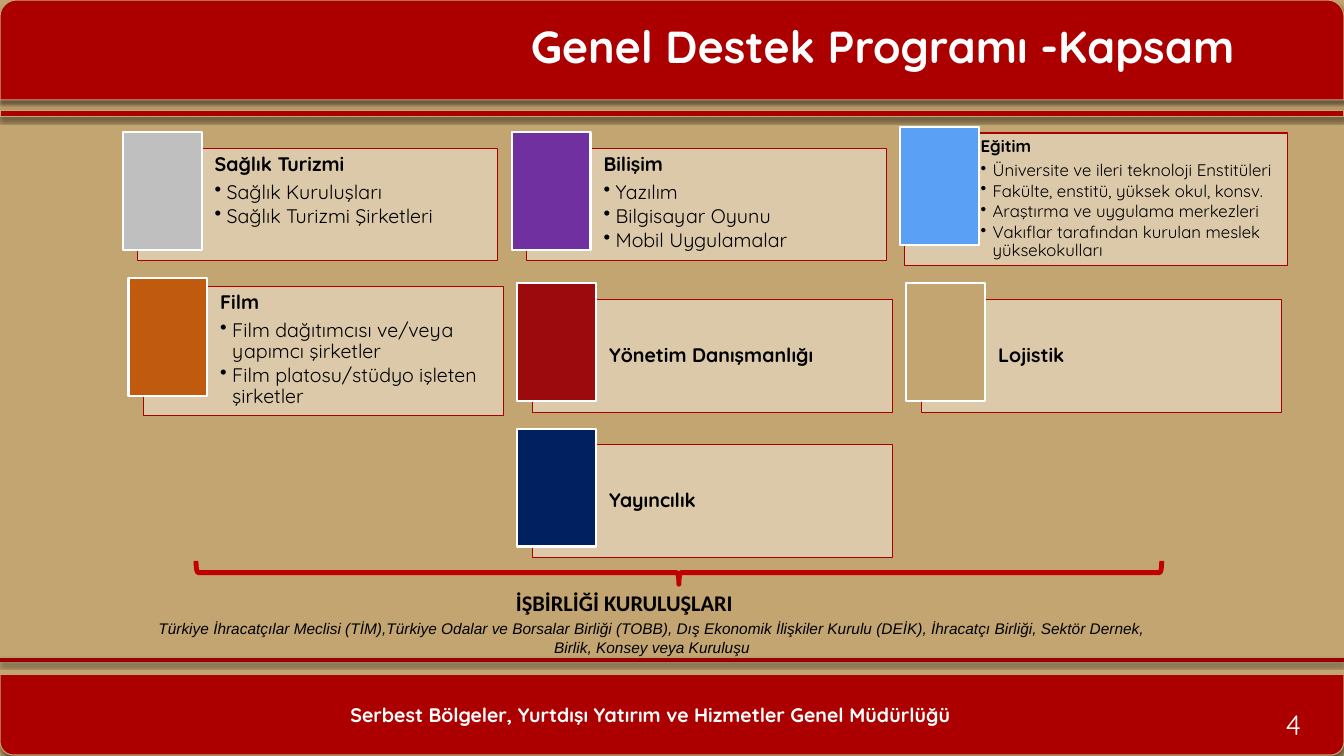
"""Build the support programme scope slide with its seven sector cards."""
from lxml import etree
from pptx import Presentation
from pptx.dml.color import RGBColor
from pptx.enum.shapes import MSO_CONNECTOR, MSO_SHAPE
from pptx.enum.text import MSO_ANCHOR, PP_ALIGN
from pptx.oxml.ns import qn
from pptx.util import Pt

RECT = MSO_SHAPE.RECTANGLE
ROUND_TOP = MSO_SHAPE.ROUND_2_SAME_RECTANGLE
BRACE = MSO_SHAPE.RIGHT_BRACE
STRAIGHT = MSO_CONNECTOR.STRAIGHT
TOP, MIDDLE = MSO_ANCHOR.TOP, MSO_ANCHOR.MIDDLE
LEFT, CENTER, RIGHT = PP_ALIGN.LEFT, PP_ALIGN.CENTER, PP_ALIGN.RIGHT

SAND = RGBColor(0xC3, 0xA5, 0x72)
RED = RGBColor(0xAC, 0x00, 0x00)
RULE_RED = RGBColor(0x99, 0x00, 0x03)
BRACE_RED = RGBColor(0xC0, 0x00, 0x00)
WHITE = RGBColor(0xFF, 0xFF, 0xFF)
BLACK = RGBColor(0x00, 0x00, 0x00)
GREY = RGBColor(0xBF, 0xBF, 0xBF)
PURPLE = RGBColor(0x70, 0x30, 0xA0)
BLUE = RGBColor(0x5A, 0xA0, 0xF5)
ORANGE = RGBColor(0xC0, 0x5A, 0x0E)
CRIMSON = RGBColor(0x9D, 0x0A, 0x0E)
NAVY = RGBColor(0x00, 0x20, 0x60)

FONT = "Quicksand"
SLIDE_W, SLIDE_H = 960, 540
CARD_W, CARD_H, CARD_STEP = 257, 80.6, 277.8
SWATCH_W, SWATCH_H = 56.2, 84.2
BULLET_INDENT = 8.6


def add_shadow(sp):
    """Give a shape or connector a soft shadow below it."""
    spPr = sp._element.spPr
    for old in spPr.findall(qn("a:effectLst")):
        spPr.remove(old)
    effects = etree.SubElement(spPr, qn("a:effectLst"))
    shadow = etree.SubElement(effects, qn("a:outerShdw"), blurRad=str(Pt(3)),
                              dist=str(Pt(2)), dir="5400000", rotWithShape="0")
    color = etree.SubElement(shadow, qn("a:srgbClr"), val="000000")
    etree.SubElement(color, qn("a:alpha"), val="45000")


def add_box(s, kind, box, fill, line, weight):
    """Add a filled and outlined preset shape without shadow."""
    sp = s.shapes.add_shape(kind, *map(Pt, box))
    sp.shadow.inherit = False
    sp.fill.solid()
    sp.fill.fore_color.rgb = fill
    sp.line.color.rgb = line
    sp.line.width = Pt(weight)
    return sp


def style(p, size, color, align=LEFT, font=FONT, bold=False, italic=False):
    """Set the alignment of a paragraph and the font of its runs."""
    p.alignment = align
    for r in p.runs:
        r.font.name = font
        r.font.size = Pt(size)
        r.font.bold = bold
        r.font.italic = italic
        r.font.color.rgb = color


def add_text(s, box, text, anchor=MIDDLE):
    """Add a wrapping text box and return its text frame."""
    tf = s.shapes.add_textbox(*map(Pt, box)).text_frame
    tf.word_wrap = True
    tf.vertical_anchor = anchor
    tf.text = text
    return tf


def header(s, box):
    """Draw the top band, the stripe under it and the slide title."""
    x, y, w, h = box
    add_shadow(add_box(s, ROUND_TOP, box, RED, SAND, 0.75))
    add_shadow(add_box(s, RECT, (x, y + h + 7.9, w, 4.3), RED, SAND, 0.75))
    tf = add_text(s, (x + 341.3, y + 14.4, 548, 36), "Genel Destek Programı -Kapsam")
    style(tf.paragraphs[0], 32, WHITE, RIGHT, bold=True)


def footer(s, box):
    """Draw the bottom band with its rule, department name and page number."""
    x, y, w, h = box
    band = add_box(s, ROUND_TOP, box, RED, SAND, 0.75)
    band.rotation = 180
    add_shadow(band)
    rule = s.shapes.add_connector(STRAIGHT, Pt(x), Pt(y - 10), Pt(x + w), Pt(y - 10))
    rule.line.color.rgb = RULE_RED
    rule.line.width = Pt(3)
    add_shadow(rule)
    tf = add_text(s, (x + 15.1, y + 17.2, 899.3, 23.8),
                  "Serbest Bölgeler, Yurtdışı Yatırım ve Hizmetler Genel Müdürlüğü")
    style(tf.paragraphs[0], 14, WHITE, CENTER, bold=True)
    tf = add_text(s, (x + 902.9, y + 17.2, 41.8, 36.7), "4")
    style(tf.paragraphs[0], 20, WHITE, CENTER)


def card(s, box, color, title, bullets=(), size=14, dx=-10.8, dy=-11.5, inset=4.3):
    """Draw a translucent panel with its text and an overlapping swatch."""
    x, y, w, h = box
    panel = add_box(s, RECT, box, WHITE, RED, 0.75)
    fill = panel._element.spPr.find(qn("a:solidFill"))
    etree.SubElement(fill[0], qn("a:alpha"), val="40000")
    tf = panel.text_frame
    tf.word_wrap = True
    tf.vertical_anchor = TOP if bullets else MIDDLE
    tf.margin_left = Pt(54.7)
    tf.margin_top = tf.margin_right = tf.margin_bottom = Pt(inset)
    tf.text = "\n".join([title, *bullets])
    for i, p in enumerate(tf.paragraphs):
        if i:
            pPr = p._p.get_or_add_pPr()
            pPr.set("marL", str(Pt(BULLET_INDENT)))
            pPr.set("indent", str(-Pt(BULLET_INDENT)))
            etree.SubElement(pPr, qn("a:buChar"), char="•")
        p.line_spacing = 0.9
        p.space_after = Pt(round(size * (0.15 if i else 0.35), 1))
        style(p, size, BLACK, bold=i == 0)
    add_box(s, RECT, (x + dx, y + dy, SWATCH_W, SWATCH_H), color, WHITE, 1.5)


def sector_cards(s, box):
    """Place the seven sector cards in three rows."""
    x, y, w, h = box
    first = [(x + i * CARD_STEP, y, CARD_W, CARD_H) for i in range(2)]
    inner = [x + 4 + i * CARD_STEP for i in range(3)]
    card(s, first[0], GREY, "Sağlık Turizmi",
         ["Sağlık Kuruluşları", "Sağlık Turizmi Şirketleri"])
    card(s, first[1], PURPLE, "Bilişim",
         ["Yazılım", "Bilgisayar Oyunu", "Mobil Uygulamalar"])
    card(s, (x + w - 273.6, y - 10.8, 273.6, 95), BLUE, "Eğitim",
         ["Üniversite ve ileri teknoloji Enstitüleri",
          "Fakülte, enstitü, yüksek okul, konsv.",
          "Araştırma ve uygulama merkezleri",
          "Vakıflar tarafından kurulan meslek yüksekokulları"],
         size=12, dx=-2.9, dy=-4.3, inset=3.6)
    card(s, (inner[0], y + 98.7, CARD_W, 92.2), ORANGE, "Film",
         ["Film dağıtımcısı ve/veya yapımcı şirketler",
          "Film platosu/stüdyo işleten şirketler"], dy=-5.8)
    for col, top, color, title in [(1, 108, CRIMSON, "Yönetim Danışmanlığı"),
                                   (2, 108, SAND, "Lojistik"),
                                   (1, 211.9, NAVY, "Yayıncılık")]:
        card(s, (inner[col], y + top, CARD_W, CARD_H), color, title)


def partners(s, box):
    """Draw the brace and the partner institutions under it."""
    x, y, w, h = box
    long, thick = 689.8, 16.6
    mid_x, mid_y = x + 419.4, y - 8.6
    brace = s.shapes.add_shape(BRACE, Pt(mid_x - thick / 2), Pt(mid_y - long / 2),
                               Pt(thick), Pt(long))
    brace.rotation = 90
    brace.shadow.inherit = False
    brace.fill.background()
    brace.line.color.rgb = BRACE_RED
    brace.line.width = Pt(3.5)
    tf = add_text(s, box, "İŞBİRLİĞİ KURULUŞLARI ", TOP)
    style(tf.paragraphs[0], 16, BLACK, CENTER, "Calibri", bold=True)
    p = tf.add_paragraph()
    p.text = ("Türkiye İhracatçılar Meclisi (TİM),Türkiye Odalar ve Borsalar Birliği (TOBB), "
              "Dış Ekonomik İlişkiler Kurulu (DEİK), İhracatçı Birliği, Sektör Dernek, "
              "Birlik, Konsey veya Kuruluşu")
    p._p.get_or_add_pPr().set("marL", str(Pt(36)))
    p.space_before = Pt(2.2)
    p.space_after = Pt(12)
    style(p, 11, BLACK, CENTER, "Arial", italic=True)


def main():
    """Assemble the slide and save it."""
    prs = Presentation()
    prs.slide_width, prs.slide_height = Pt(SLIDE_W), Pt(SLIDE_H)
    s = prs.slides.add_slide(prs.slide_layouts[6])
    s.background.fill.solid()
    s.background.fill.fore_color.rgb = SAND
    footer(s, (0, 481.7, SLIDE_W, 57.6))
    header(s, (0, 0, SLIDE_W, 71.3))
    partners(s, (65.5, 417.6, 764.6, 85))
    sector_cards(s, (98.6, 105.8, 820.8, 292.5))
    prs.save("out.pptx")


if __name__ == "__main__":
    main()
